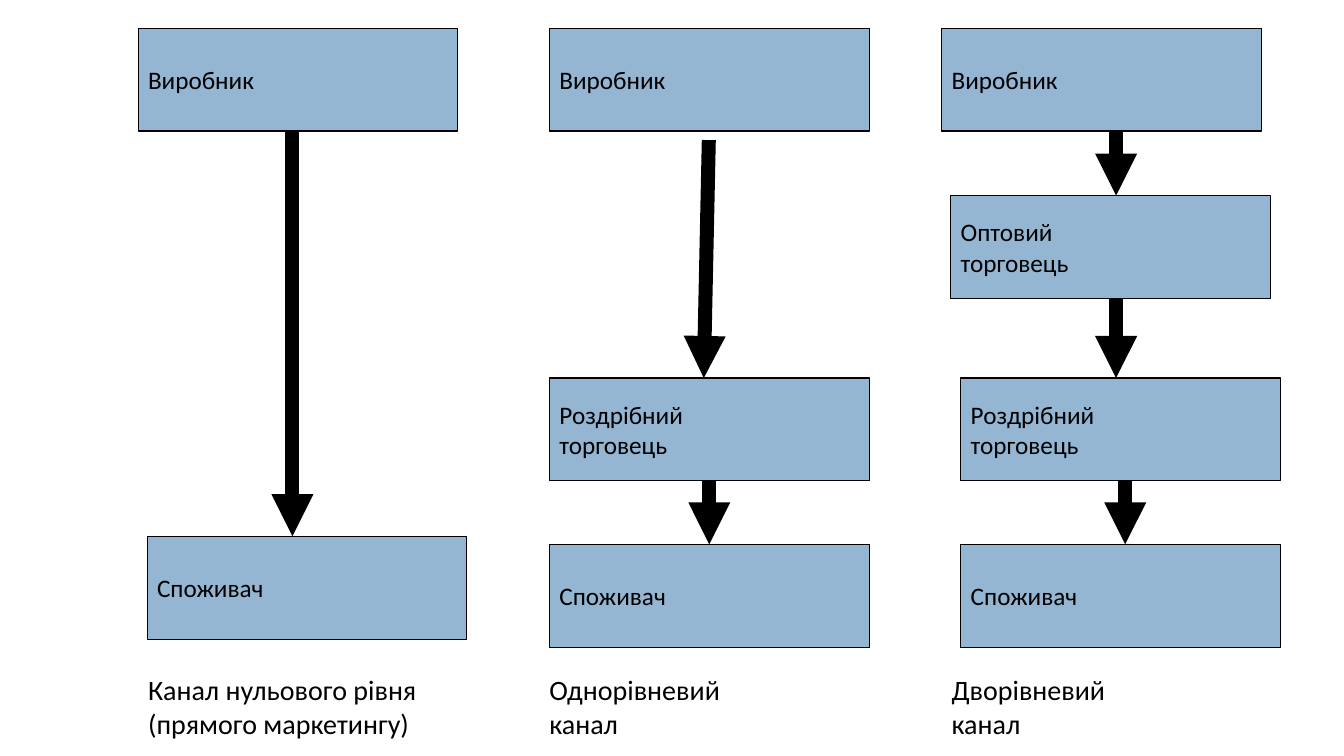
"""Build a slide comparing zero-, one- and two-level distribution channels."""
from itertools import pairwise

from lxml.etree import SubElement
from pptx import Presentation
from pptx.dml.color import RGBColor
from pptx.enum.shapes import MSO_CONNECTOR as Connector, MSO_SHAPE as Shape
from pptx.enum.text import MSO_ANCHOR as Anchor, PP_ALIGN as Align
from pptx.oxml.ns import qn
from pptx.util import Pt

PX = 9144
SLIDE_SIZE = (1333, 750)
BOX_SIZE = (317, 102)
CAPTION_SIZE = (336, 99)
CAPTION_TOP = 651
BOTTOM, TOP = 2, 0

THEME = {
    "box": RGBColor(0x94, 0xB6, 0xD2),
    "ink": RGBColor(0, 0, 0),
    "font": "Calibri",
    "box_text": Pt(18),
    "caption_text": Pt(20),
    "outline": Pt(0.75),
    "arrow": Pt(10),
}

MAKER = ["Виробник"]
WHOLESALER = ["Оптовий", "торговець"]
RETAILER = ["Роздрібний", "торговець"]
CONSUMER = ["Споживач"]

# Each box is (lines, left, top); each arrow is (start x, end x, gap below the upper box).
CHANNELS = [
    {
        "caption": ["Канал нульового рівня", "(прямого маркетингу)"],
        "caption_left": 137,
        "boxes": [(MAKER, 137, 28), (CONSUMER, 146, 532)],
        "arrows": [(290, 290, 0)],
    },
    {
        "caption": ["Однорівневий", "канал"],
        "caption_left": 535,
        "boxes": [(MAKER, 545, 28), (RETAILER, 545, 375), (CONSUMER, 545, 540)],
        "arrows": [(703, 698, 9), (703, 703, 0)],
    },
    {
        "caption": ["Дворівневий", "канал"],
        "caption_left": 934,
        "boxes": [
            (MAKER, 934, 28),
            (WHOLESALER, 943, 194),
            (RETAILER, 953, 375),
            (CONSUMER, 953, 540),
        ],
        "arrows": [(1107, 1107, 0), (1107, 1107, 0), (1116, 1116, 0)],
    },
]


def emu(*lengths):
    return [length * PX for length in lengths]


def apply_format(target, values):
    for name, value in values.items():
        setattr(target, name, value)


def write_lines(shape, lines, size):
    frame = shape.text_frame
    apply_format(frame, {"word_wrap": True, "vertical_anchor": Anchor.MIDDLE})
    frame.text = "\n".join(lines)
    for paragraph in frame.paragraphs:
        paragraph.alignment = Align.LEFT
        apply_format(paragraph.runs[0].font, {"size": size, "name": THEME["font"]})
        paragraph.runs[0].font.color.rgb = THEME["ink"]


def add_box(slide, lines, left, top):
    box = slide.shapes.add_shape(Shape.RECTANGLE, *emu(left, top, *BOX_SIZE))
    box.shadow.inherit = False
    box.fill.solid()
    box.fill.fore_color.rgb = THEME["box"]
    box.line.color.rgb = THEME["ink"]
    box.line.width = THEME["outline"]
    write_lines(box, lines, THEME["box_text"])
    return box


def add_arrow(slide, upper, lower, start_x, end_x, gap):
    start_y = upper.top + upper.height + gap * PX
    arrow = slide.shapes.add_connector(
        Connector.STRAIGHT, start_x * PX, start_y, end_x * PX, lower.top
    )
    if gap == 0 and is_centre(upper, start_x):
        arrow.begin_connect(upper, BOTTOM)
    if is_centre(lower, end_x):
        arrow.end_connect(lower, TOP)
    arrow.line.color.rgb = THEME["ink"]
    arrow.line.width = THEME["arrow"]
    SubElement(arrow.line._get_or_add_ln(), qn("a:tailEnd"), type="triangle")
    SubElement(arrow._element.spPr, qn("a:effectLst"))


def is_centre(box, x):
    return abs(box.left + box.width / 2 - x * PX) < PX


def add_channel(slide, channel):
    boxes = [add_box(slide, *box) for box in channel["boxes"]]
    for (upper, lower), arrow in zip(pairwise(boxes), channel["arrows"]):
        add_arrow(slide, upper, lower, *arrow)
    caption = slide.shapes.add_textbox(
        *emu(channel["caption_left"], CAPTION_TOP, *CAPTION_SIZE)
    )
    write_lines(caption, channel["caption"], THEME["caption_text"])


def main():
    presentation = Presentation()
    width, height = emu(*SLIDE_SIZE)
    apply_format(presentation, {"slide_width": width, "slide_height": height})
    slide = presentation.slides.add_slide(presentation.slide_layouts[6])
    for channel in CHANNELS:
        add_channel(slide, channel)
    presentation.save("out.pptx")


if __name__ == "__main__":
    main()
